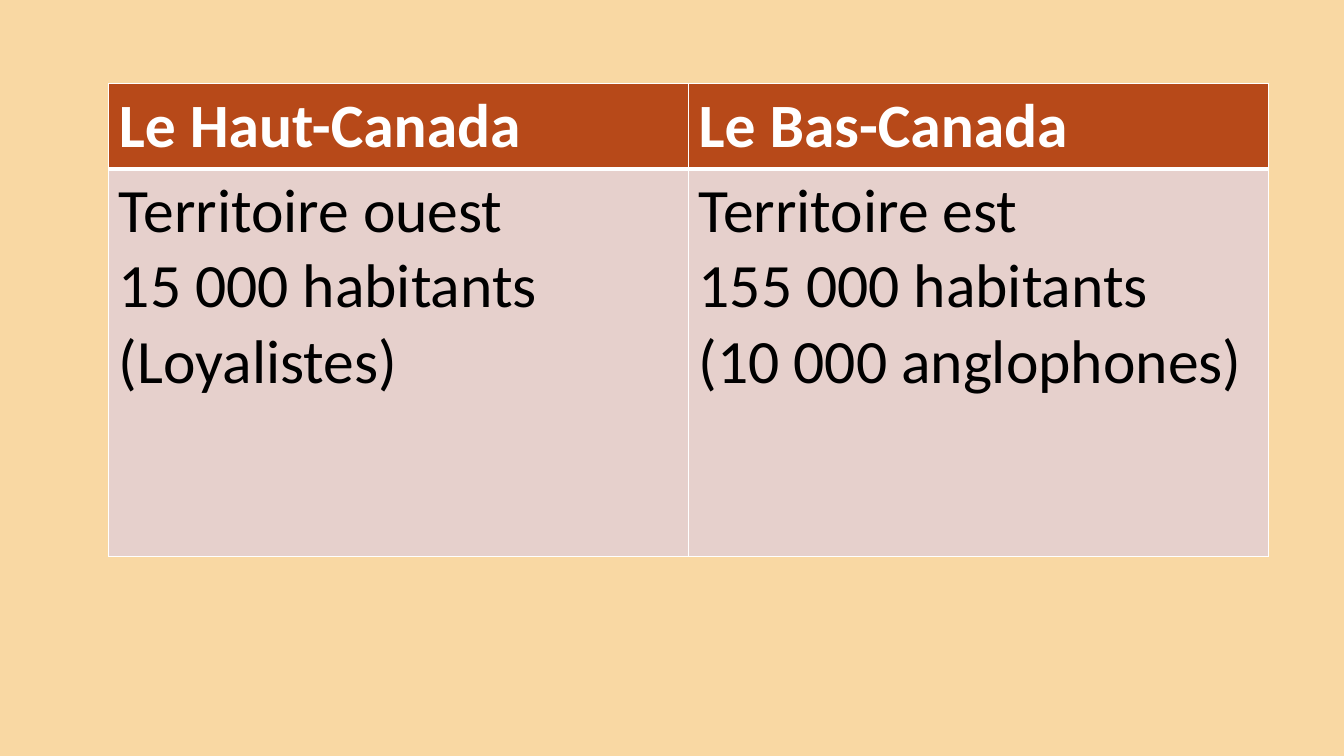
from lxml.etree import SubElement
from pptx import Presentation
from pptx.dml.color import RGBColor
from pptx.oxml.ns import qn
from pptx.util import Inches, Pt

COLOURS = {
    "background": "F9D8A3",
    "header": "B74919",
    "body": "E6D0CC",
    "white": "FFFFFF",
    "black": "000000",
}
PROVINCES = [
    ("Le Haut-Canada", ["Territoire ouest", "15 000 habitants (Loyalistes)"]),
    ("Le Bas-Canada", ["Territoire est", "155 000 habitants", "(10 000 anglophones)"]),
]
ROW_HEIGHTS = (0.84, 3.84)
COLUMN_WIDTH = 5.75


def colour(name):
    return RGBColor.from_string(COLOURS[name])


def paint(fill, name):
    fill.solid()
    fill.fore_color.rgb = colour(name)


def add_borders(cell, top, bottom):
    properties = cell._tc.get_or_add_tcPr()
    for side, width in (("L", 1), ("R", 1), ("T", top), ("B", bottom)):
        line = SubElement(properties, qn(f"a:ln{side}"), w=str(Pt(width)))
        fill = SubElement(line, qn("a:solidFill"))
        SubElement(fill, qn("a:srgbClr"), val=COLOURS["white"])


def fill_cell(cell, lines, background, ink, bold, top, bottom):
    add_borders(cell, top, bottom)
    paint(cell.fill, background)
    cell.text = "\n".join(lines)
    for para in cell.text_frame.paragraphs:
        para.font.name = "Calibri"
        para.font.size = Pt(44)
        para.font.bold = bold
        para.font.color.rgb = colour(ink)


def add_comparison(page):
    frame = page.shapes.add_table(
        len(ROW_HEIGHTS), len(PROVINCES), Inches(1.08), Inches(0.83),
        Inches(COLUMN_WIDTH * len(PROVINCES)), Inches(sum(ROW_HEIGHTS)))
    table = frame.table
    table.horz_banding = False
    for row, height in zip(table.rows, ROW_HEIGHTS):
        row.height = Inches(height)
    for index, (name, facts) in enumerate(PROVINCES):
        table.columns[index].width = Inches(COLUMN_WIDTH)
        fill_cell(table.cell(0, index), [name], "header", "white", True, 1, 3)
        fill_cell(table.cell(1, index), facts, "body", "black", False, 3, 1)


def main():
    deck = Presentation()
    deck.slide_width = Inches(13.33)
    deck.slide_height = Inches(7.5)
    page = deck.slides.add_slide(deck.slide_layouts[6])
    paint(page.background.fill, "background")
    add_comparison(page)
    deck.save("out.pptx")


if __name__ == "__main__":
    main()
